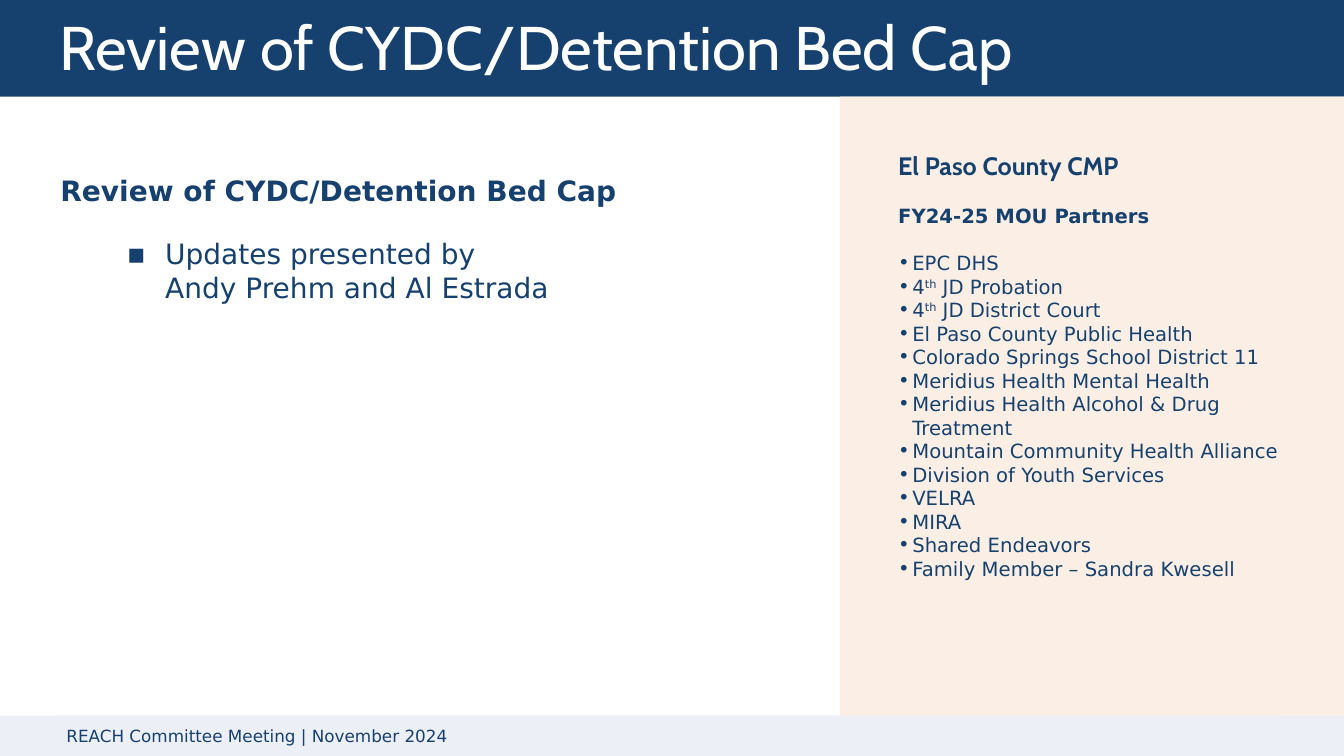
from dataclasses import dataclass

from lxml import etree
from pptx import Presentation
from pptx.dml.color import RGBColor
from pptx.enum.shapes import MSO_SHAPE
from pptx.enum.text import MSO_ANCHOR, PP_ALIGN
from pptx.oxml.ns import qn
from pptx.util import Inches, Pt

RECTANGLE = MSO_SHAPE.RECTANGLE
MIDDLE = MSO_ANCHOR.MIDDLE
LEFT = PP_ALIGN.LEFT


@dataclass(frozen=True)
class Theme:
    navy: str = "16406D"
    white: str = "FFFFFF"
    peach: str = "FBEFE5"
    mist: str = "EDEFF7"
    heading_font: str = "Cabin"
    body_font: str = "DejaVu Sans"
    title_size: float = 44
    body_size: float = 20
    panel_title_size: float = 18
    list_size: float = 14
    footer_size: float = 12
    list_gap: float = 16.8


THEME = Theme()
SLIDE_WIDTH, SLIDE_HEIGHT = 13.33, 7.5
HEADER_HEIGHT, FOOTER_HEIGHT, PANEL_WIDTH = 0.96, 0.4, 5

# Each partner is a list of (text, is superscript) runs
PARTNERS = [
    [("EPC DHS", False)],
    [("4", False), ("th", True), (" JD Probation", False)],
    [("4", False), ("th", True), (" JD District Court", False)],
    [("El Paso County Public Health", False)],
    [("Colorado Springs School District 11", False)],
    [("Meridius Health Mental Health", False)],
    [("Meridius Health Alcohol & Drug Treatment", False)],
    [("Mountain Community Health Alliance", False)],
    [("Division of Youth Services", False)],
    [("VELRA", False)],
    [("MIRA", False)],
    [("Shared Endeavors", False)],
    [("Family Member – Sandra Kwesell", False)],
]


def add_band(page, left, top, width, height, color):
    band = page.shapes.add_shape(
        RECTANGLE, Inches(left), Inches(top), Inches(width), Inches(height))
    band.shadow.inherit = False
    band.fill.solid()
    band.fill.fore_color.rgb = RGBColor.from_string(color)
    band.line.fill.background()
    return band


def add_text_frame(page, left, top, width, height):
    box = page.shapes.add_textbox(
        Inches(left), Inches(top), Inches(width), Inches(height))
    box.text_frame.word_wrap = True
    return box.text_frame


def add_span(para, text, size, font=THEME.body_font, color=THEME.navy,
             bold=False, superscript=False):
    span = para.add_run()
    span.text = text
    span.font.size = Pt(size)
    span.font.name = font
    span.font.bold = bold
    span.font.color.rgb = RGBColor.from_string(color)
    if superscript:
        span.font._element.set("baseline", "30000")


def set_indent(para, margin, hanging=0, bullet=None):
    properties = para._p.get_or_add_pPr()
    properties.set("marL", str(Inches(margin)))
    properties.set("indent", str(-Inches(hanging)))
    if bullet:
        etree.SubElement(properties, qn("a:buFont")).set("typeface", THEME.body_font)
        etree.SubElement(properties, qn("a:buChar")).set("char", bullet)


def add_header(page, left, top, width, height):
    add_band(page, left, top, width, height, THEME.navy)
    frame = add_text_frame(page, left + 0.49, top + 0.12, width - 1.04, height - 0.24)
    para = frame.paragraphs[0]
    para.line_spacing = 0.9
    add_span(para, "Review of CYDC/Detention Bed Cap", THEME.title_size,
             THEME.heading_font, THEME.white)


def add_agenda(page, left, top):
    # Topic
    topic = add_text_frame(page, left, top + 0.71, 6.92, 0.44).paragraphs[0]
    set_indent(topic, 0.5)
    add_span(topic, "Review of CYDC/Detention Bed Cap", THEME.body_size, bold=True)

    # Presenters
    update = add_text_frame(page, left + 0.66, top + 1.34, 4.9, 0.77).paragraphs[0]
    set_indent(update, 0.88, 0.38, "▪")
    add_span(update, "Updates presented by Andy Prehm and Al Estrada", THEME.body_size)


def add_partner_panel(page, left, top, width, height):
    add_band(page, left, top, width, height, THEME.peach)
    frame = add_text_frame(page, left + 0.48, top + 0.48, width - 0.58, 4.61)

    # Headings
    para = frame.paragraphs[0]
    para.space_after = Pt(THEME.list_gap)
    add_span(para, "El Paso County CMP", THEME.panel_title_size,
             THEME.heading_font, bold=True)
    para = frame.add_paragraph()
    para.space_after = Pt(THEME.list_gap)
    add_span(para, "FY24-25 MOU Partners", THEME.list_size, bold=True)

    # Partner list
    for partner in PARTNERS:
        para = frame.add_paragraph()
        set_indent(para, 0.14, 0.14, "•")
        for text, superscript in partner:
            add_span(para, text, THEME.list_size, superscript=superscript)


def add_footer(page, left, top, width, height):
    add_band(page, left, top, width, height, THEME.mist)
    label = add_band(page, left + 0.56, top, width - 1.21, height, THEME.mist)
    frame = label.text_frame
    frame.word_wrap = True
    frame.vertical_anchor = MIDDLE
    para = frame.paragraphs[0]
    para.alignment = LEFT
    add_span(para, "REACH Committee Meeting | November 2024", THEME.footer_size)


def main():
    deck = Presentation()
    deck.slide_width = Inches(SLIDE_WIDTH)
    deck.slide_height = Inches(SLIDE_HEIGHT)
    page = deck.slides.add_slide(deck.slide_layouts[6])

    footer_top = SLIDE_HEIGHT - FOOTER_HEIGHT
    add_header(page, 0, 0, SLIDE_WIDTH, HEADER_HEIGHT)
    add_agenda(page, 0, HEADER_HEIGHT)
    add_partner_panel(page, SLIDE_WIDTH - PANEL_WIDTH, HEADER_HEIGHT,
                      PANEL_WIDTH, footer_top - HEADER_HEIGHT)
    add_footer(page, 0, footer_top, SLIDE_WIDTH, FOOTER_HEIGHT)
    deck.save("out.pptx")


if __name__ == "__main__":
    main()
